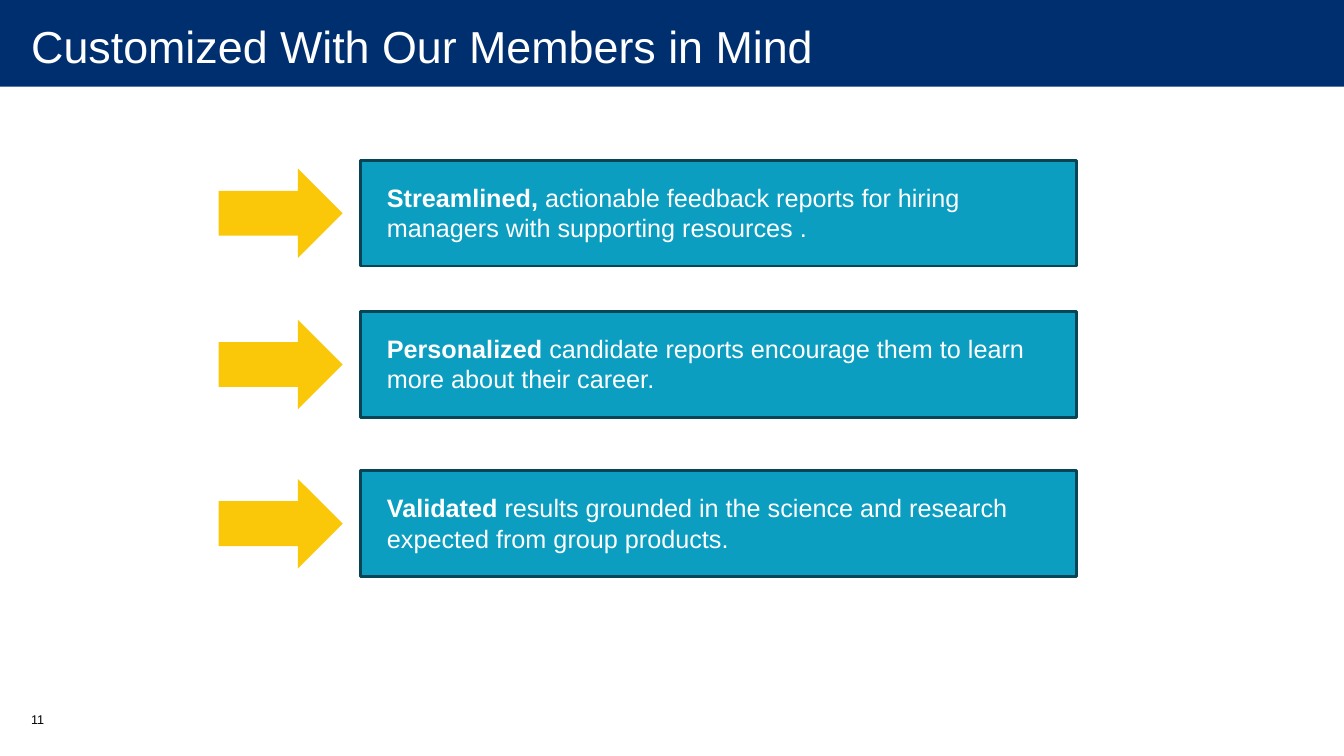
from pptx import Presentation
from pptx.dml.color import RGBColor
from pptx.enum import shapes, text
from pptx.util import Pt

NAVY = RGBColor(0x00, 0x2F, 0x70)
TEAL = RGBColor(0x0B, 0x9E, 0xC1)
DARK_TEAL = RGBColor(0x05, 0x45, 0x55)
YELLOW = RGBColor(0xFA, 0xC8, 0x09)
WHITE = RGBColor(0xFF, 0xFF, 0xFF)
BLACK = RGBColor(0x00, 0x00, 0x00)


class SlideBuilder:
    """Holds the font and the current slide."""

    font = "Arial"

    def __init__(self, slide):
        self.slide = slide

    def shape(self, kind, left, top, width, height, fill, outline=None):
        shape = self.slide.shapes.add_shape(
            kind, Pt(left), Pt(top), Pt(width), Pt(height))
        shape.shadow.inherit = False
        shape.fill.solid()
        shape.fill.fore_color.rgb = fill
        if outline is None:
            shape.line.fill.background()
        else:
            shape.line.color.rgb = outline
            shape.line.width = Pt(2)

    def text(self, left, top, width, height, runs, size, color,
             insets=(7.2, 3.6, 7.2, 3.6), anchor=text.MSO_ANCHOR.TOP):
        """Add a text box; runs are (wording, bold) pairs."""
        frame = self.slide.shapes.add_textbox(
            Pt(left), Pt(top), Pt(width), Pt(height)).text_frame
        frame.word_wrap = True
        frame.vertical_anchor = anchor
        (frame.margin_left, frame.margin_top,
         frame.margin_right, frame.margin_bottom) = map(Pt, insets)
        for wording, bold in runs:
            run = frame.paragraphs[0].add_run()
            run.text = wording
            run.font.name = self.font
            run.font.size = Pt(size)
            run.font.bold = bold
            run.font.color.rgb = color

    def benefit(self, top, lead, rest, text_width):
        """Add one row: a panel, its wording and the arrow towards it."""
        self.shape(shapes.MSO_SHAPE.RECTANGLE, 257.8, top, 511.2, 75.6,
                   TEAL, DARK_TEAL)
        self.text(269.3, top + 12.2, text_width, 51.1,
                  [(lead, True), (rest, False)], 18, WHITE)
        self.shape(shapes.MSO_SHAPE.RIGHT_ARROW, 156.2, top + 5.8, 88.6, 64.1,
                   YELLOW)


def main():
    deck = Presentation()
    deck.slide_width, deck.slide_height = Pt(960), Pt(540)
    builder = SlideBuilder(deck.slides.add_slide(deck.slide_layouts[6]))

    # Title band
    builder.shape(shapes.MSO_SHAPE.RECTANGLE, 0, 0, 960, 61.9, NAVY)
    builder.text(0.7, -2.2, 959.3, 69.8,
                 [("Customized With Our Members in Mind", False)], 32, WHITE,
                 insets=(21.6, 0, 14.4, 0), anchor=text.MSO_ANCHOR.MIDDLE)

    # Benefits
    benefits = [
        (114.5, "Streamlined, ",
         "actionable feedback reports for hiring managers "
         "with supporting resources .", 487.4),
        (222.5, "Personalized ",
         "candidate reports encourage them to learn more "
         "about their career.", 487.4),
        (336.2, "Validated",
         " results grounded in the science and research "
         "expected from group products.", 500.4),
    ]
    for benefit in benefits:
        builder.benefit(*benefit)

    # Page number
    builder.text(15.1, 504.7, 35.3, 28.8, [("11", False)], 9, BLACK)

    deck.save("out.pptx")


if __name__ == "__main__":
    main()
